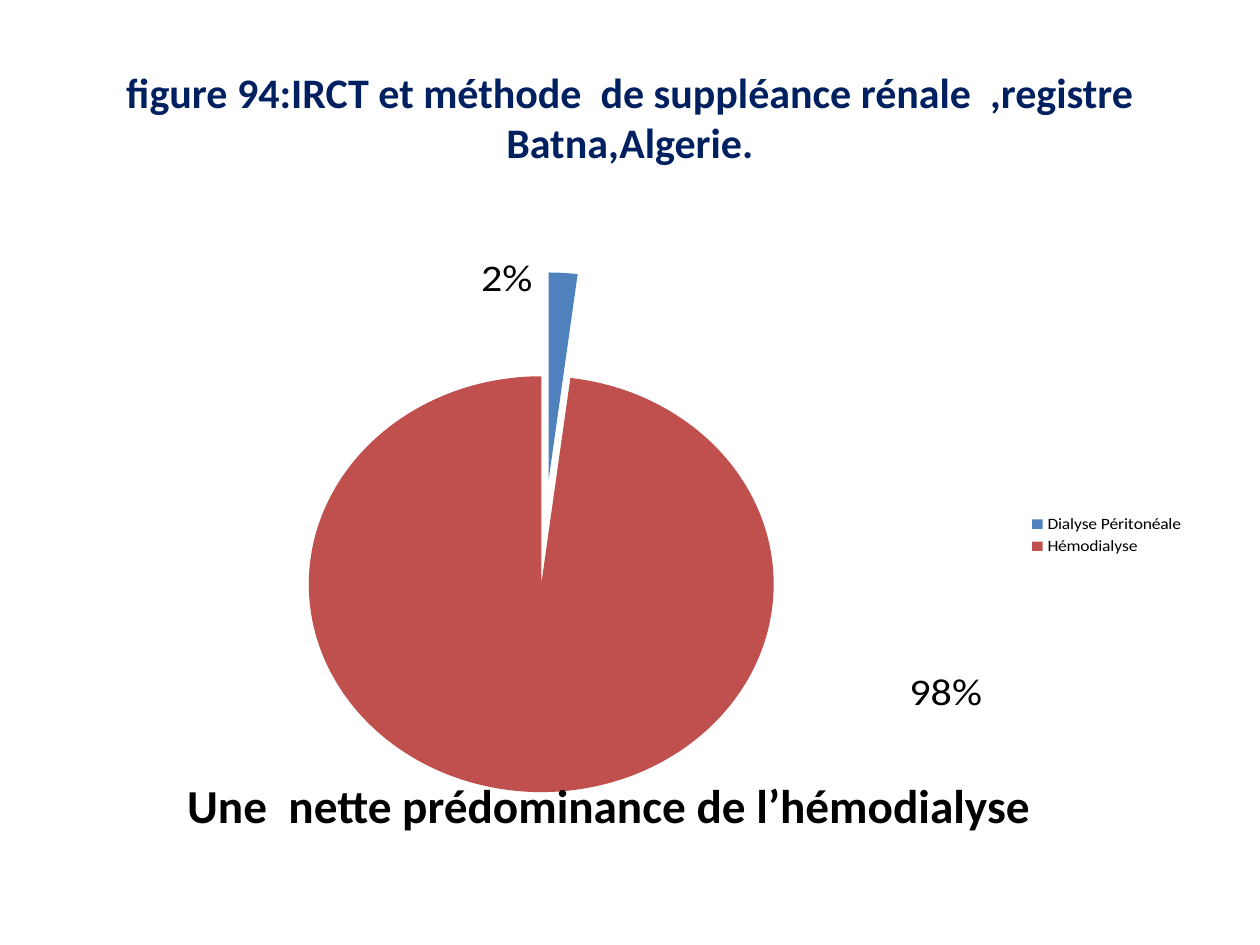
from lxml import etree
from pptx import Presentation
from pptx import util as u
from pptx.chart.data import CategoryChartData
from pptx.dml.color import RGBColor
from pptx.enum import chart as charts, text
from pptx.oxml.ns import qn


def colour(value):
    return RGBColor.from_string(value)


def manual_layout(parent, index, **settings):
    for old in parent.findall(qn("c:layout")):
        parent.remove(old)
    layout = etree.Element(qn("c:layout"))
    manual = etree.SubElement(layout, qn("c:manualLayout"))
    for name, value in settings.items():
        etree.SubElement(manual, qn(f"c:{name}"), val=str(value))
    parent.insert(index, layout)


class SlideBuilder:
    font = "Calibri"
    black = "000000"
    navy = "002060"

    def __init__(self, deck):
        self.slide = deck.slides.add_slide(deck.slide_layouts[6])

    def style(self, font, size, value, bold=False):
        font.name = self.font
        font.size = u.Pt(size)
        font.bold = bold
        font.color.rgb = colour(value)

    def text_box(self, words, area, size, value, anchor, spacing=1.0, top=0.05):
        box = self.slide.shapes.add_textbox(*map(u.Inches, area))
        frame = box.text_frame
        frame.word_wrap = True
        frame.vertical_anchor = anchor
        frame.margin_top = u.Inches(top)
        para = frame.paragraphs[0]
        para.text = words
        para.alignment = text.PP_ALIGN.CENTER
        para.line_spacing = spacing
        self.style(para.font, size, value, bold=True)

    def pie(self, area, slices, explosion):
        data = CategoryChartData()
        data.categories = [item[0] for item in slices]
        data.add_series("Series 1", [item[1] for item in slices])
        chart = self.slide.shapes.add_chart(
            charts.XL_CHART_TYPE.PIE, *map(u.Inches, area), data
        ).chart
        chart.has_title = False
        self.style(chart.font, 10, self.black)
        chart.has_legend = True
        chart.legend.position = charts.XL_LEGEND_POSITION.RIGHT
        chart.legend.include_in_layout = False
        plot = chart.plots[0]
        plot.vary_by_categories = True
        series = plot.series[0]
        labels = series.data_labels
        labels.show_percentage = True
        labels.show_value = False
        self.style(labels.font, 24, self.black)
        for leader in labels._element.findall(qn("c:showLeaderLines")):
            leader.set("val", "0")
        for index, (_, _, fill, shift) in enumerate(slices):
            point = series.points[index]
            point.format.fill.solid()
            point.format.fill.fore_color.rgb = colour(fill)
            self.explode(series, index, explosion)
            self.percent_label(point.data_label, labels, index, shift)
        manual_layout(
            chart._chartSpace.chart.plotArea, 0, layoutTarget="inner",
            xMode="edge", yMode="edge", x=0.22, y=0.12, w=0.41, h=0.75,
        )

    def explode(self, series, index, percent):
        point = series._element.findall(qn("c:dPt"))[index]
        for old in point.findall(qn("c:explosion")):
            point.remove(old)
        explosion = etree.Element(qn("c:explosion"), val=str(percent))
        point.find(qn("c:spPr")).addprevious(explosion)

    def percent_label(self, label, labels, index, shift):
        self.style(label.font, 24, self.black)
        label.position = charts.XL_LABEL_POSITION.OUTSIDE_END
        element = labels._element.findall(qn("c:dLbl"))[index]
        element.find(qn("c:showVal")).set("val", "0")
        element.find(qn("c:showPercent")).set("val", "1")
        manual_layout(element, 1, x=shift[0], y=shift[1])


def main():
    deck = Presentation()
    deck.slide_width, deck.slide_height = u.Inches(10), u.Inches(7.5)
    page = SlideBuilder(deck)
    page.pie(
        (0.5, 1.75, 9, 4.95),
        [
            ("Dialyse Péritonéale", 2, "4F81BD", (-0.05, -0.01)),
            ("Hémodialyse", 98, "C0504D", (0.37, -0.23)),
        ],
        explosion=25,
    )
    page.text_box(
        "figure 94:IRCT et méthode  de suppléance rénale  ,registre Batna,Algerie.",
        (0.5, 0.3, 9, 1.25), 24, page.navy, text.MSO_ANCHOR.MIDDLE,
    )
    page.text_box(
        "Une  nette prédominance de l’hémodialyse",
        (0.33, 6.25, 9, 0.92), 27, page.black, text.MSO_ANCHOR.TOP,
        spacing=0.8, top=0,
    )
    deck.save("out.pptx")


if __name__ == "__main__":
    main()
